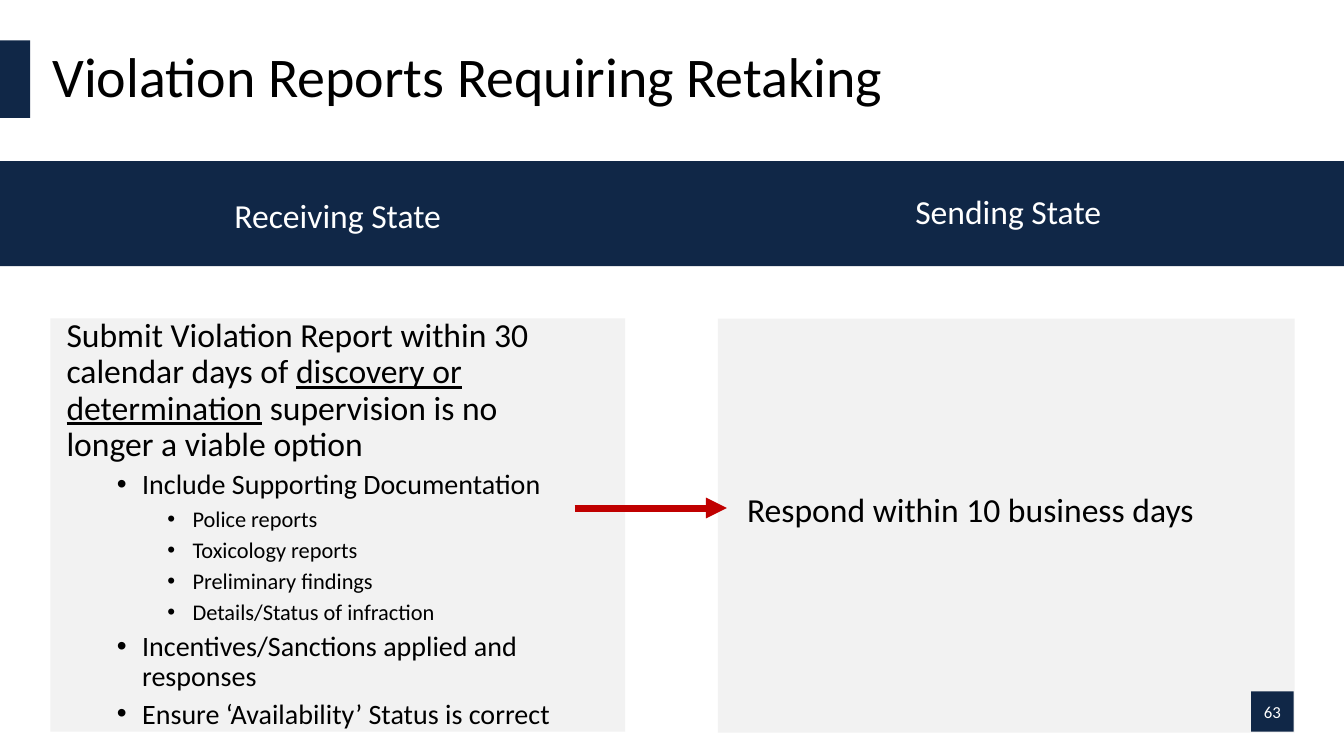
import pptx
import pptx.dml.color
import pptx.enum.shapes
import pptx.enum.text
import pptx.oxml.ns
import pptx.util
from lxml import etree

Inches, Pt = pptx.util.Inches, pptx.util.Pt
RGBColor = pptx.dml.color.RGBColor
PP_ALIGN, MSO_ANCHOR = pptx.enum.text.PP_ALIGN, pptx.enum.text.MSO_ANCHOR
qn = pptx.oxml.ns.qn

NAVY = RGBColor(0x10, 0x27, 0x47)
PANEL = RGBColor(0xF2, 0xF2, 0xF2)
RED = RGBColor(0xC0, 0x00, 0x00)
BLACK = RGBColor(0x00, 0x00, 0x00)
WHITE = RGBColor(0xFF, 0xFF, 0xFF)

# Outline level -> size, left margin, space before
LEVELS = {0: (24, 0, 0), 1: (20, 0.75, 5), 2: (16, 1.25, 5)}
REPORT_STEPS = [
    (0, ["Submit Violation Report within 30 calendar days of ",
         "discovery or determination",
         " supervision is no longer a viable option"]),
    (1, ["Include Supporting Documentation"]),
    (2, ["Police reports"]),
    (2, ["Toxicology reports"]),
    (2, ["Preliminary findings"]),
    (2, ["Details/Status of infraction"]),
    (1, ["Incentives/Sanctions applied and responses"]),
    (1, ["Ensure ‘Availability’ Status is correct"]),
]


def add_run(p, text, size=24, color=BLACK, underline=None):
    r = p.add_run()
    r.text = text
    r.font.name, r.font.size = "Calibri", Pt(size)
    r.font.color.rgb = color
    r.font.underline = underline


class Deck:
    def __init__(self, prs, font_color=BLACK):
        self.font_color = font_color
        self.s = prs.slides.add_slide(prs.slide_layouts[1])

    def frame(self, sp, anchor=MSO_ANCHOR.TOP):
        tf = sp.text_frame
        tf.margin_left = tf.margin_right = tf.margin_top = tf.margin_bottom = 0
        tf.word_wrap = True
        tf.auto_size = pptx.enum.text.MSO_AUTO_SIZE.NONE
        tf.vertical_anchor = anchor
        return tf

    def place(self, sp, x, y, w, h):
        sp.left, sp.top, sp.width, sp.height = map(Inches, (x, y, w, h))

    def title(self, text, *box):
        sp = self.s.shapes.title
        self.place(sp, *box)
        p = self.frame(sp, MSO_ANCHOR.MIDDLE).paragraphs[0]
        p.alignment, p.line_spacing = PP_ALIGN.LEFT, 0.9
        add_run(p, text, size=40, color=self.font_color)

    def outline(self, items, *box):
        sp = self.s.placeholders[1]
        self.place(sp, *box)
        tf = self.frame(sp)
        for i, (level, parts) in enumerate(items):
            p = tf.paragraphs[0] if i == 0 else tf.add_paragraph()
            size, margin, before = LEVELS[level]
            p.level, p.line_spacing, p.space_before = level, 0.9, Pt(before)
            self.bullet(p, margin)
            for k, text in enumerate(parts):
                add_run(p, text, size=size, color=self.font_color,
                        underline=True if k == 1 else None)

    def bullet(self, p, margin):
        pPr = p._p.get_or_add_pPr()
        pPr.set("marL", str(Inches(margin)))
        pPr.set("indent", str(Inches(-0.25 if margin else 0)))
        if margin:
            etree.SubElement(pPr, qn("a:buFont")).set("typeface", "Arial")
            etree.SubElement(pPr, qn("a:buChar")).set("char", "•")
        else:
            etree.SubElement(pPr, qn("a:buNone"))

    def rect(self, fill, *box, behind=False):
        sp = self.s.shapes.add_shape(
            pptx.enum.shapes.MSO_SHAPE.RECTANGLE, *map(Inches, box))
        sp.shadow.inherit = False
        sp.fill.solid()
        sp.fill.fore_color.rgb = fill
        sp.line.fill.background()
        if behind:
            self.s.shapes.title._element.addprevious(sp._element)
        return sp

    def text(self, text, *box, align=PP_ALIGN.CENTER, color=WHITE, spacing=0.9):
        sp = self.s.shapes.add_textbox(*map(Inches, box))
        p = self.frame(sp).paragraphs[0]
        p.alignment, p.line_spacing = align, spacing
        add_run(p, text, color=color)

    def arrow(self, x1, y1, x2, y2):
        c = self.s.shapes.add_connector(
            pptx.enum.shapes.MSO_CONNECTOR.STRAIGHT, *map(Inches, (x1, y1, x2, y2)))
        c.line.color.rgb, c.line.width = RED, Pt(5)
        etree.SubElement(c.line._get_or_add_ln(), qn("a:tailEnd")).set("type", "triangle")
        etree.SubElement(c._element.spPr, qn("a:effectLst"))


def main():
    prs = pptx.Presentation()
    prs.slide_width, prs.slide_height = Inches(13.33), Inches(7.5)
    deck = Deck(prs)

    # Grey panels behind the text
    deck.rect(PANEL, 7.12, 3.16, 5.72, 4.11, behind=True)
    deck.rect(PANEL, 0.5, 3.16, 5.7, 4.1, behind=True)

    # Title and receiving state duties
    deck.title("Violation Reports Requiring Retaking", 0.52, 0.4, 12.31, 0.77)
    deck.outline(REPORT_STEPS, 0.66, 3.16, 5.1, 4.63)

    # Title accent and page number
    deck.rect(NAVY, 0, 0.4, 0.3, 0.77)
    number = deck.rect(NAVY, 12.41, 6.86, 0.42, 0.4)
    p = deck.frame(number, MSO_ANCHOR.MIDDLE).paragraphs[0]
    p.alignment = PP_ALIGN.CENTER
    add_run(p, "63", size=12, color=WHITE)

    # Header band
    deck.rect(NAVY, 0, 1.6, 13.33, 1.04)
    deck.text("Receiving State", 0.94, 1.93, 4.82, 0.4, spacing=1.0)
    deck.text("Sending State", 7.59, 1.94, 4.82, 0.36)

    # Sending state response
    deck.text("Respond within 10 business days", 7.41, 4.9, 5.27, 0.36,
              align=PP_ALIGN.LEFT, color=BLACK)
    deck.arrow(5.7, 5.04, 7.21, 5.04)

    prs.save("out.pptx")


if __name__ == "__main__":
    main()
